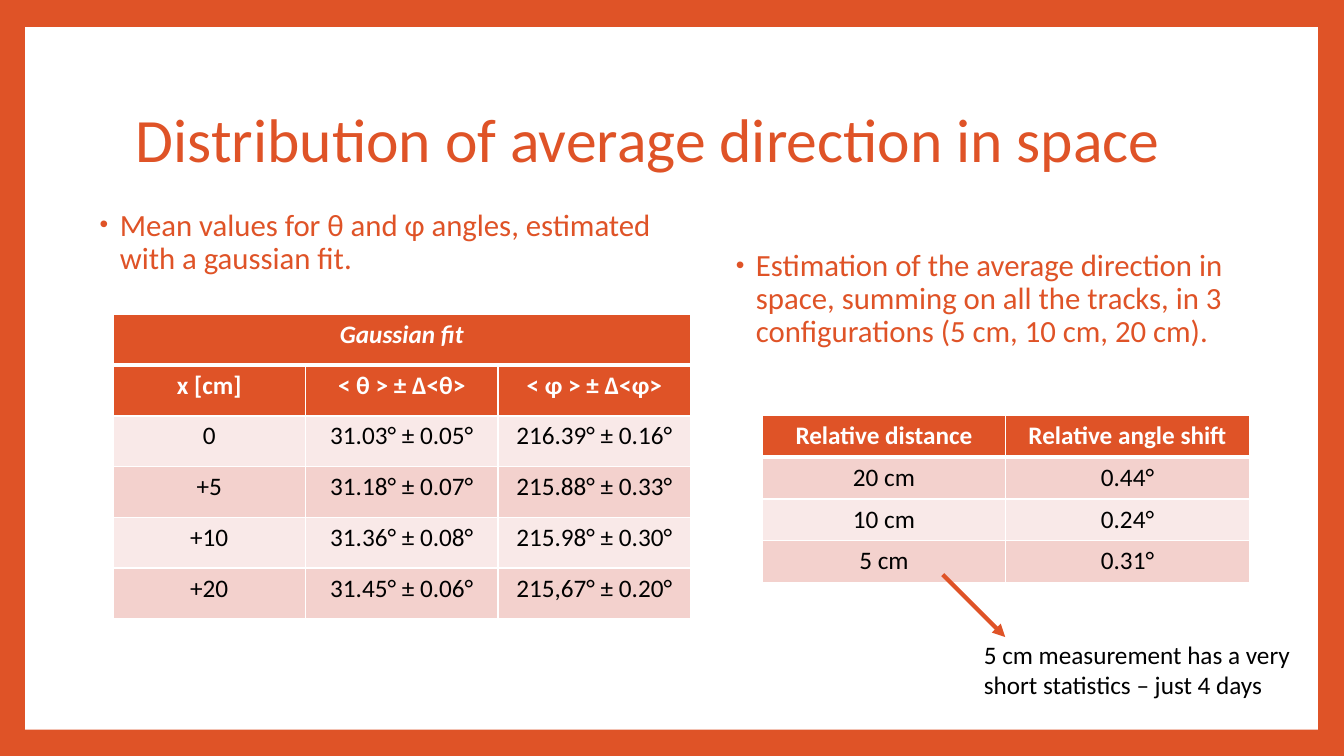
import pptx
import pptx.dml.color
import pptx.enum.shapes
import pptx.enum.text
import pptx.oxml
import pptx.oxml.ns
import pptx.util
from dataclasses import dataclass
from pptx.util import Inches

TITLE = "Distribution of average direction in space"
BULLETS = [
    ("Mean values for θ and φ angles, estimated with a gaussian fit.", (0.84, 2.03, 5.9, 0.97)),
    ("Estimation of the average direction in space, summing on all the tracks, "
     "in 3 configurations (5 cm, 10 cm, 20 cm).", (7.15, 2.43, 5.64, 4.4)),
]
NOTE = "5 cm measurement has a very short statistics – just 4 days"
GAUSSIAN_FIT = [
    ("Gaussian fit", "", ""),
    ("x [cm]", "< θ > ± Δ<θ>", "< φ > ± Δ<φ>"),
    ("0", "31.03° ± 0.05°", "216.39° ± 0.16°"),
    ("+5", "31.18° ± 0.07°", "215.88° ± 0.33°"),
    ("+10", "31.36° ± 0.08°", "215.98° ± 0.30°"),
    ("+20", "31.45° ± 0.06°", "215,67° ± 0.20°"),
]
ANGLE_SHIFT = [
    ("Relative distance", "Relative angle shift"),
    ("20 cm", "0.44°"),
    ("10 cm", "0.24°"),
    ("5 cm", "0.31°"),
]


@dataclass(frozen=True)
class Theme:
    font: str = "Calibri"
    accent: str = "DF5327"
    paper: str = "FFFFFF"
    ink: str = "000000"
    bands: tuple = ("F9E9E8", "F3D1CD")
    title_size: int = 44
    bullet_size: int = 22
    body_size: int = 18
    thin: int = 1
    thick: int = 3


THEME = Theme()


def color(value):
    return pptx.dml.color.RGBColor.from_string(value)


def paint(fill, value):
    fill.solid()
    fill.fore_color.rgb = color(value)


def write(frame, text, size=THEME.body_size, ink=THEME.ink, bold=False, italic=False,
          align=None, line_spacing=None, bullet=False):
    frame.word_wrap = True
    paragraph = frame.paragraphs[0]
    paragraph.alignment = align
    paragraph.line_spacing = line_spacing
    run = paragraph.add_run()
    run.text = text
    run.font.name = THEME.font
    run.font.size = pptx.util.Pt(size)
    run.font.bold = bold
    run.font.italic = italic
    run.font.color.rgb = color(ink)
    if bullet:
        paragraph.space_before = pptx.util.Pt(14)
        properties = paragraph._p.get_or_add_pPr()
        properties.set("marL", str(Inches(0.25)))
        properties.set("indent", str(Inches(-0.2)))
        namespace = pptx.oxml.ns.nsdecls("a")
        for markup in (f'<a:buClr {namespace}><a:srgbClr val="{ink}"/></a:buClr>',
                       f'<a:buSzPct {namespace} val="80000"/>',
                       f'<a:buFont {namespace} typeface="Arial"/>',
                       f'<a:buChar {namespace} char="•"/>'):
            properties.append(pptx.oxml.parse_xml(markup))


def add_text(slide, text, box, anchor=pptx.enum.text.MSO_ANCHOR.TOP, **text_format):
    shape = slide.shapes.add_textbox(*map(Inches, box))
    shape.text_frame.vertical_anchor = anchor
    write(shape.text_frame, text, **text_format)


def set_borders(cell, top, bottom):
    properties = cell._tc.get_or_add_tcPr()
    widths = {"lnL": THEME.thin, "lnR": THEME.thin, "lnT": top, "lnB": bottom}
    for position, (side, width) in enumerate(widths.items()):
        properties.insert(position, pptx.oxml.parse_xml(
            f'<a:{side} {pptx.oxml.ns.nsdecls("a")} w="{pptx.util.Pt(width)}"><a:solidFill>'
            f'<a:srgbClr val="{THEME.paper}"/></a:solidFill></a:{side}>'))


def add_data_table(slide, rows, box, header_rows, merged_title=False):
    columns = len(rows[0])
    table = slide.shapes.add_table(len(rows), columns, *map(Inches, box)).table
    for column in table.columns:
        column.width = Inches(box[2] / columns)
    for row in table.rows:
        row.height = Inches(box[3] / len(rows))
    if merged_title:
        table.cell(0, 0).merge(table.cell(0, columns - 1))
    for row_index, row in enumerate(rows):
        is_header = row_index < header_rows
        for column_index, text in enumerate(row):
            cell = table.cell(row_index, column_index)
            paint(cell.fill, THEME.accent if is_header else THEME.bands[row_index % 2])
            set_borders(cell, top=THEME.thick if row_index == 1 else THEME.thin,
                        bottom=THEME.thick if row_index == 0 else THEME.thin)
            if text:
                write(cell.text_frame, text, bold=is_header,
                      italic=merged_title and row_index == 0,
                      ink=THEME.paper if is_header else THEME.ink,
                      align=pptx.enum.text.PP_ALIGN.CENTER)


def add_arrow(slide, start, end):
    arrow = slide.shapes.add_connector(pptx.enum.shapes.MSO_CONNECTOR.STRAIGHT,
                                       *map(Inches, start + end))
    arrow.line.color.rgb = color(THEME.accent)
    arrow.line.width = pptx.util.Pt(THEME.thick)
    namespace = pptx.oxml.ns.nsdecls("a")
    arrow.line._get_or_add_ln().append(
        pptx.oxml.parse_xml(f'<a:tailEnd {namespace} type="triangle"/>'))
    arrow._element.spPr.append(pptx.oxml.parse_xml(f"<a:effectLst {namespace}/>"))


def main():
    presentation = pptx.Presentation()
    presentation.slide_width = Inches(13.33)
    presentation.slide_height = Inches(7.5)
    slide = presentation.slides.add_slide(presentation.slide_layouts[6])
    paint(slide.background.fill, THEME.accent)

    panel = slide.shapes.add_shape(pptx.enum.shapes.MSO_SHAPE.RECTANGLE,
                                   *map(Inches, (0.25, 0.27, 12.82, 6.97)))
    panel.shadow.inherit = False
    paint(panel.fill, THEME.paper)
    panel.line.fill.background()

    add_text(slide, TITLE, (1.25, 0.67, 10.8, 1.48), size=THEME.title_size, ink=THEME.accent,
             line_spacing=0.9, anchor=pptx.enum.text.MSO_ANCHOR.MIDDLE)
    for text, box in BULLETS:
        add_text(slide, text, box, size=THEME.bullet_size, ink=THEME.accent,
                 line_spacing=0.9, bullet=True)
    add_data_table(slide, GAUSSIAN_FIT, (1.12, 3.12, 5.73, 3.02), header_rows=2,
                   merged_title=True)
    add_data_table(slide, ANGLE_SHIFT, (7.56, 4.12, 4.83, 1.66), header_rows=1)
    add_text(slide, NOTE, (9.66, 6.29, 3.27, 0.71))
    add_arrow(slide, (9.35, 5.7), (9.97, 6.32))
    presentation.save("out.pptx")


if __name__ == "__main__":
    main()
